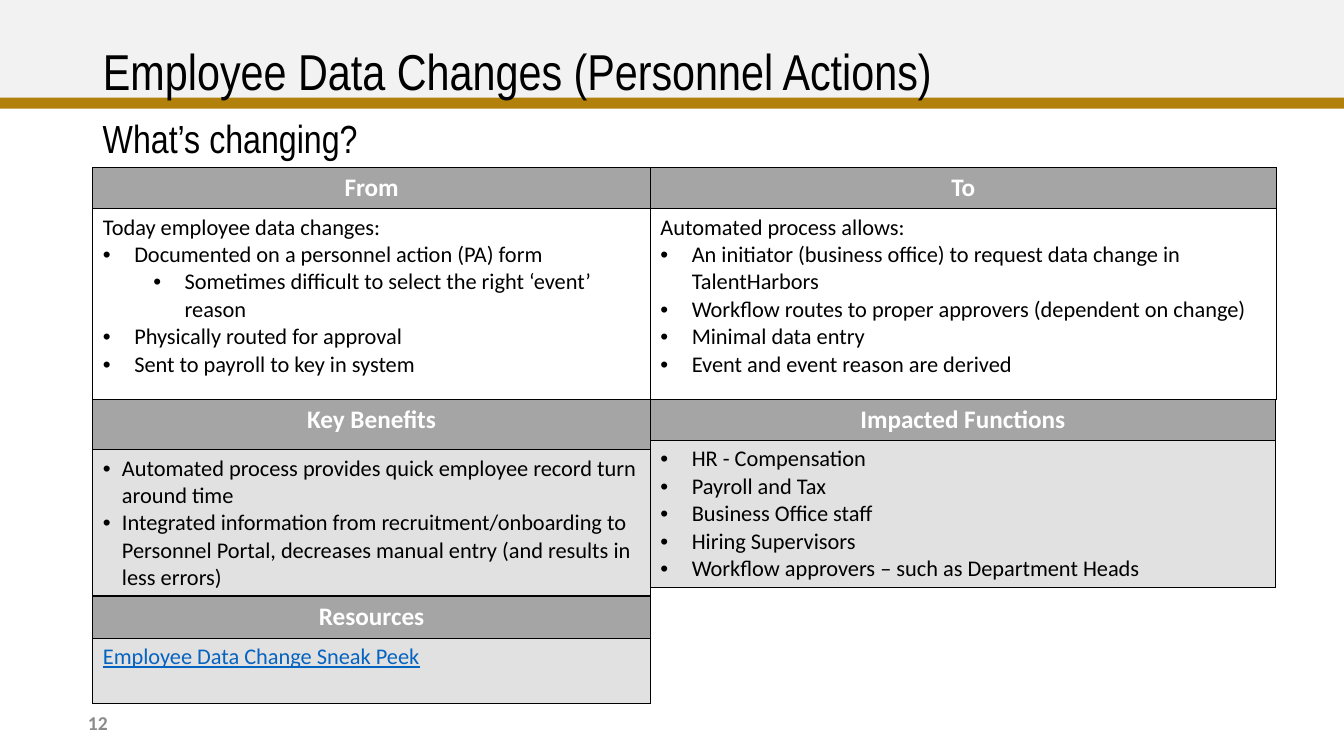
from lxml import etree
from pptx import Presentation
from pptx.dml.color import RGBColor
from pptx.enum.shapes import MSO_SHAPE
from pptx.enum.text import MSO_ANCHOR, MSO_AUTO_SIZE, PP_ALIGN
from pptx.oxml.ns import qn
from pptx.util import Cm, Pt

BLACK = RGBColor(0x00, 0x00, 0x00)
WHITE = RGBColor(0xFF, 0xFF, 0xFF)
BAND_GRAY = RGBColor(0xF2, 0xF2, 0xF2)
GOLD = RGBColor(0xB1, 0x81, 0x0B)
HEADER_GRAY = RGBColor(0xA5, 0xA5, 0xA5)
BODY_GRAY = RGBColor(0xE1, 0xE1, 0xE1)
NUMBER_GRAY = RGBColor(0x8C, 0x8C, 0x8C)
LINK_BLUE = RGBColor(0x05, 0x63, 0xC1)

RECTANGLE = MSO_SHAPE.RECTANGLE
TOP, MIDDLE = MSO_ANCHOR.TOP, MSO_ANCHOR.MIDDLE
LEFT, CENTER, RIGHT = PP_ALIGN.LEFT, PP_ALIGN.CENTER, PP_ALIGN.RIGHT
NO_AUTOFIT = MSO_AUTO_SIZE.NONE

HEADING = {"name": "Arial Narrow", "size": Pt(36), "bold": False}
SUBHEADING = {**HEADING, "size": Pt(28)}
HEADER = {"name": "Calibri", "size": Pt(18), "bold": True}
BODY = {"name": "Calibri", "size": Pt(16), "bold": False}
LINK = {**BODY, "underline": True}
PAGE = {"name": "Calibri", "size": Pt(14), "bold": True}

BULLETS = {"wide": (0, Cm(0.79), Cm(0.79)),
           "nested": (1, Cm(2.06), Cm(0.79)),
           "tight": (0, Cm(0.48), Cm(0.48))}


def write(paragraph, text, font_values, color, align=LEFT, bullet=None):
    paragraph.text = text
    paragraph.alignment = align
    if bullet:
        level, margin, hanging = BULLETS[bullet]
        paragraph.level = level
        properties = paragraph._p.get_or_add_pPr()
        properties.set("marL", str(margin))
        properties.set("indent", str(-hanging))
        etree.SubElement(properties, qn("a:buFont"), typeface="Arial")
        etree.SubElement(properties, qn("a:buChar"), char="•")
    font = paragraph.runs[0].font
    for attribute, value in font_values.items():
        setattr(font, attribute, value)
    font.color.rgb = color


def style_cell(cell, fill_color):
    properties = cell._tc.get_or_add_tcPr()
    for side in ("a:lnL", "a:lnR", "a:lnT", "a:lnB"):
        border = etree.SubElement(properties, qn(side), w=str(Pt(1)))
        border_fill = etree.SubElement(border, qn("a:solidFill"))
        etree.SubElement(border_fill, qn("a:srgbClr"), val=str(BLACK))
    cell.fill.solid()
    cell.fill.fore_color.rgb = fill_color


presentation = Presentation()
presentation.slide_width = Cm(33.87)
presentation.slide_height = Cm(19.05)
slide = presentation.slides.add_slide(presentation.slide_layouts[5])

for top, height, color in ((0, 2.69, BAND_GRAY), (2.46, 0.28, GOLD)):
    band = slide.shapes.add_shape(RECTANGLE, 0, Cm(top), Cm(33.87), Cm(height))
    band.shadow.inherit = False
    band.fill.solid()
    band.fill.fore_color.rgb = color
    band.line.fill.background()

title = slide.shapes.title
title.element.getparent().append(title.element)
title.left, title.top, title.width, title.height = Cm(2.34), Cm(1.02), Cm(29.21), Cm(1.68)
subtitle = slide.shapes.add_textbox(Cm(2.34), Cm(2.9), Cm(29.21), Cm(1.02))
page_number = slide.shapes.add_textbox(Cm(1.7), Cm(17.7), Cm(1.27), Cm(1.02))

for holder, text, font_values, color, align, anchor, spacing in (
    (title, "Employee Data Changes (Personnel Actions)", HEADING, BLACK, LEFT, MIDDLE, 0.9),
    (subtitle, "What’s changing?", SUBHEADING, BLACK, LEFT, TOP, 0.9),
    (page_number, "12", PAGE, NUMBER_GRAY, RIGHT, MIDDLE, 1.0),
):
    frame = holder.text_frame
    frame.auto_size = NO_AUTOFIT
    frame.word_wrap = True
    frame.vertical_anchor = anchor
    write(frame.paragraphs[0], text, font_values, color, align)
    frame.paragraphs[0].line_spacing = spacing

from_text = [
    (None, "Today employee data changes:"),
    ("wide", "Documented on a personnel action (PA) form"),
    ("nested", "Sometimes difficult to select the right ‘event’ reason"),
    ("wide", "Physically routed for approval"),
    ("wide", "Sent to payroll to key in system"),
]
to_text = [
    (None, "Automated process allows:"),
    ("wide", "An initiator (business office) to request data change in TalentHarbors"),
    ("wide", "Workflow routes to proper approvers (dependent on change)"),
    ("wide", "Minimal data entry"),
    ("wide", "Event and event reason are derived"),
]
benefits = [
    ("tight", "Automated process provides quick employee record turn around time"),
    ("tight", "Integrated information from recruitment/onboarding to Personnel Portal, "
              "decreases manual entry (and results in less errors)"),
]
functions = [
    ("wide", "HR - Compensation"),
    ("wide", "Payroll and Tax"),
    ("wide", "Business Office staff"),
    ("wide", "Hiring Supervisors"),
    ("wide", "Workflow approvers – such as Department Heads"),
]
resources = [(None, "Employee Data Change Sneak Peek")]

sections = [
    (2.34, 4.22, (14.05, 15.77), (1.04, 4.8), WHITE, BODY, BLACK,
     [("From", from_text), ("To", to_text)]),
    (2.34, 10.06, (14.05,), (1.27, 3.7), BODY_GRAY, BODY, BLACK,
     [("Key Benefits", benefits)]),
    (16.39, 10.06, (15.75,), (1.04, 3.7), BODY_GRAY, BODY, BLACK,
     [("Impacted Functions", functions)]),
    (2.34, 15.02, (14.05,), (1.06, 1.65), BODY_GRAY, LINK, LINK_BLUE,
     [("Resources", resources)]),
]

for left, top, widths, heights, body_fill, body_font, body_color, columns in sections:
    table = slide.shapes.add_table(2, len(columns), Cm(left), Cm(top),
                                   Cm(sum(widths)), Cm(sum(heights))).table
    table.horz_banding = False
    for row, height in zip(table.rows, heights):
        row.height = Cm(height)
    for index, (width, (heading, items)) in enumerate(zip(widths, columns)):
        table.columns[index].width = Cm(width)
        header_cell, body_cell = table.cell(0, index), table.cell(1, index)
        style_cell(header_cell, HEADER_GRAY)
        style_cell(body_cell, body_fill)
        write(header_cell.text_frame.paragraphs[0], heading, HEADER, WHITE, CENTER)
        body_frame = body_cell.text_frame
        for position, (bullet, text) in enumerate(items):
            paragraph = body_frame.add_paragraph() if position else body_frame.paragraphs[0]
            write(paragraph, text, body_font, body_color, LEFT, bullet)

presentation.save("out.pptx")
